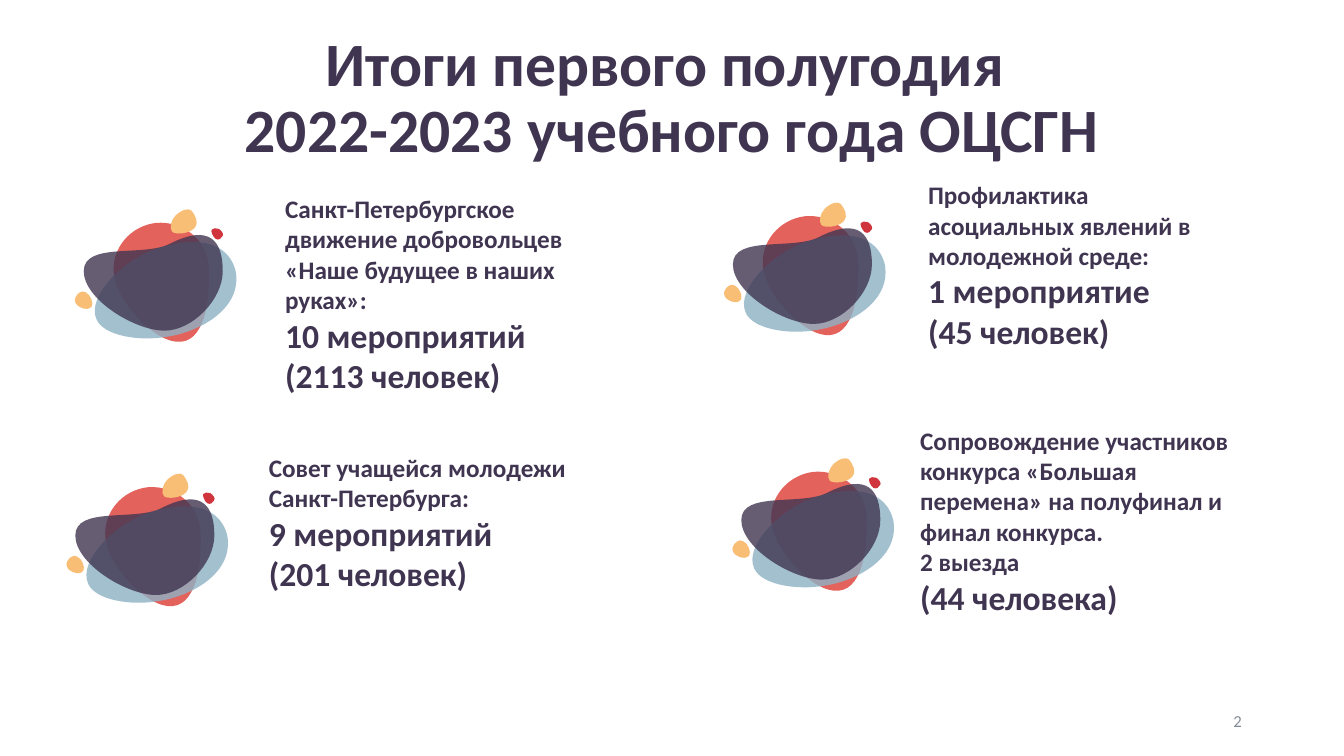
from dataclasses import dataclass

from lxml.etree import SubElement
from pptx import Presentation
from pptx.dml.color import RGBColor
from pptx.enum.text import MSO_ANCHOR as Anchor, MSO_AUTO_SIZE as AutoSize, PP_ALIGN as Align
from pptx.oxml.ns import qn
from pptx.util import Pt

PLUM, CORAL, SKY, AMBER, CRIMSON, GREY = "403551", "E4625C", "8DB1C4", "F9BE75", "D0343C", "848B98"
CURVE_STEPS = 8
Point = tuple[float, float]


@dataclass(frozen=True)
class Blob:
    color: str
    opacity: int  # percent
    outline: tuple[Point, ...]  # closed Bezier loop: anchor, control, control, anchor, ...


@dataclass(frozen=True)
class Result:
    splash: Point
    box: tuple[float, float, float, float]
    lines: tuple[tuple[str, int], ...]


# Blobs of one splash, back to front, measured from its top left corner
BLOBS = (
    Blob(CORAL, 100, (
        (28.1, 46.1), (29.5, 64.1), (57.6, 96.5), (76.3, 94.3), (95, 92.2), (97.2, 57.6),
        (95.8, 38.9), (93.6, 20.9), (77, 7.9), (58.3, 9.4), (39.6, 11.5), (25.9, 28.1))),
    Blob(SKY, 80, (
        (15.8, 78.5), (20.9, 90), (46.1, 94.3), (66.2, 90.7), (87.1, 87.8), (119.5, 72),
        (115.2, 44.6), (113, 33.8), (102.2, 14.4), (59.8, 27.4), (36, 34.6), (7.9, 61.9))),
    Blob(PLUM, 80, (
        (6.5, 43.9), (6.5, 64.1), (43.2, 86.4), (64.1, 86.4), (84.2, 86.4), (105.8, 64.1),
        (105.8, 43.9), (105.8, 23), (97.2, 9.4), (67.7, 24.5), (49, 33.8), (6.5, 23))),
    Blob(AMBER, 100, (
        (69.8, 15.8), (72, 18), (82.1, 17.3), (85.7, 13), (89.3, 8.6), (85.7, 3.6),
        (83.5, 0.7), (81.4, -1.4), (76.3, 0), (72, 4.3), (68.4, 7.9), (67.7, 13.7))),
    Blob(AMBER, 100, (
        (12.2, 69.1), (13.7, 67), (11.5, 60.5), (7.9, 59), (5, 56.9), (1.4, 60.5),
        (0.7, 62.6), (-0.7, 64.8), (0.7, 68.4), (4.3, 69.8), (7.2, 71.3), (10.8, 71.3))),
    Blob(CRIMSON, 100, (
        (97.9, 14.4), (97.2, 15.1), (98.6, 19.4), (100.8, 20.9), (103, 22.3), (105.1, 20.2),
        (105.8, 18.7), (106.6, 17.3), (105.1, 15.1), (103, 13.7), (100.8, 13), (98.6, 13))),
)

RESULTS = (
    Result((53.3, 149.8), (196.6, 122.4, 234.7, 159.8), (
        ("Санкт-Петербургское движение добровольцев «Наше будущее в наших руках»:", 18),
        ("10 мероприятий", 24), ("(2113 человек)", 24))),
    Result((47.3, 338.6), (185, 307.4, 234.7, 116.6), (
        ("Совет учащейся молодежи Санкт-Петербурга:", 18),
        ("9 мероприятий", 24), ("(201 человек)", 24))),
    Result((517, 145), (655.9, 113, 234.7, 137.7), (
        ("Профилактика асоциальных явлений в молодежной среде:", 18),
        ("1 мероприятие", 24), ("(45 человек)", 24))),
    Result((523, 327.6), (650.2, 288, 234.7, 152.6), (
        ("Сопровождение участников конкурса «Большая перемена» на полуфинал и финал конкурса.", 18),
        ("2 выезда", 18), ("(44 человека)", 24))),
)


def apply(target, values: dict) -> None:
    for name, value in values.items():
        setattr(target, name, value)


def paint(color_format, color: str) -> None:
    color_format.rgb = RGBColor.from_string(color)


def sample(loop: list[tuple[int, int]]) -> list[tuple[float, float]]:
    """Points along the Bezier loop, which give the blob its bounds."""
    points = []
    for start in range(0, len(loop) - 1, 3):
        curve = loop[start:start + 4]
        for step in range(CURVE_STEPS):
            t = step / CURVE_STEPS
            weights = ((1 - t) ** 3, 3 * t * (1 - t) ** 2, 3 * t ** 2 * (1 - t), t ** 3)
            points.append(tuple(sum(w * p[axis] for w, p in zip(weights, curve))
                                for axis in (0, 1)))
    return points


def bend(patch, loop: list[tuple[int, int]]) -> None:
    """Exchange the straight segments of the patch for its Bezier curves."""
    contour = next(patch._element.iter(qn("a:path")))
    for segment in list(contour):
        contour.remove(segment)
    moves = [("a:moveTo", loop[:1])]
    moves += [("a:cubicBezTo", loop[i:i + 3]) for i in range(1, len(loop), 3)]
    for tag, points in moves:
        move = SubElement(contour, qn(tag))
        for x, y in points:
            point = SubElement(move, qn("a:pt"))
            point.set("x", str(int(x - patch.left)))
            point.set("y", str(int(y - patch.top)))
    SubElement(contour, qn("a:close"))


def draw_splash(slide, origin: Point) -> None:
    splash = slide.shapes.add_group_shape()
    for blob in BLOBS:
        loop = [(Pt(x + origin[0]), Pt(y + origin[1]))
                for x, y in blob.outline + blob.outline[:1]]
        first, *rest = sample(loop)
        builder = splash.shapes.build_freeform(*first)
        builder.add_line_segments(rest, close=True)
        patch = builder.convert_to_shape()
        bend(patch, loop)
        patch.shadow.inherit = False
        patch.line.fill.background()
        patch.fill.solid()
        paint(patch.fill.fore_color, blob.color)
        if blob.opacity < 100:
            tint = next(patch._element.spPr.iter(qn("a:srgbClr")))
            SubElement(tint, qn("a:alpha")).set("val", str(blob.opacity * 1000))


def write(holder, lines: tuple[tuple[str, int], ...], frame: dict, paragraph_format: dict,
          color: str, bold: bool) -> None:
    text = holder.text_frame
    apply(text, {"word_wrap": True, "auto_size": AutoSize.NONE, **frame})
    for index, (wording, size) in enumerate(lines):
        paragraph = text.add_paragraph() if index else text.paragraphs[0]
        paragraph.text = wording
        apply(paragraph, paragraph_format)
        for run in paragraph.runs:
            apply(run.font, {"name": "Calibri", "size": Pt(size), "bold": bold})
            paint(run.font.color, color)


def main() -> None:
    deck = Presentation()
    apply(deck, {"slide_width": Pt(960), "slide_height": Pt(540)})
    slide = deck.slides.add_slide(deck.slide_layouts[5])

    # Heading
    heading = slide.shapes.title
    apply(heading, {"left": Pt(66.2), "top": Pt(26.6), "width": Pt(828), "height": Pt(89.3)})
    write(heading, (("Итоги первого полугодия \v2022-2023 учебного года ОЦСГН", 44),),
          {"vertical_anchor": Anchor.MIDDLE},
          {"alignment": Align.CENTER, "line_spacing": 0.9}, PLUM, True)

    # Results with their splashes
    for result in RESULTS:
        draw_splash(slide, result.splash)
        summary = slide.shapes.add_textbox(*map(Pt, result.box))
        write(summary, result.lines,
              {"vertical_anchor": Anchor.BOTTOM, "margin_top": Pt(14.4), "margin_bottom": 0},
              {"alignment": Align.LEFT}, PLUM, True)

    # Page number
    page_number = slide.shapes.add_textbox(Pt(678.2), Pt(500.4), Pt(216), Pt(28.8))
    write(page_number, (("2", 12),), {"vertical_anchor": Anchor.MIDDLE},
          {"alignment": Align.RIGHT}, GREY, False)

    deck.save("out.pptx")


if __name__ == "__main__":
    main()
